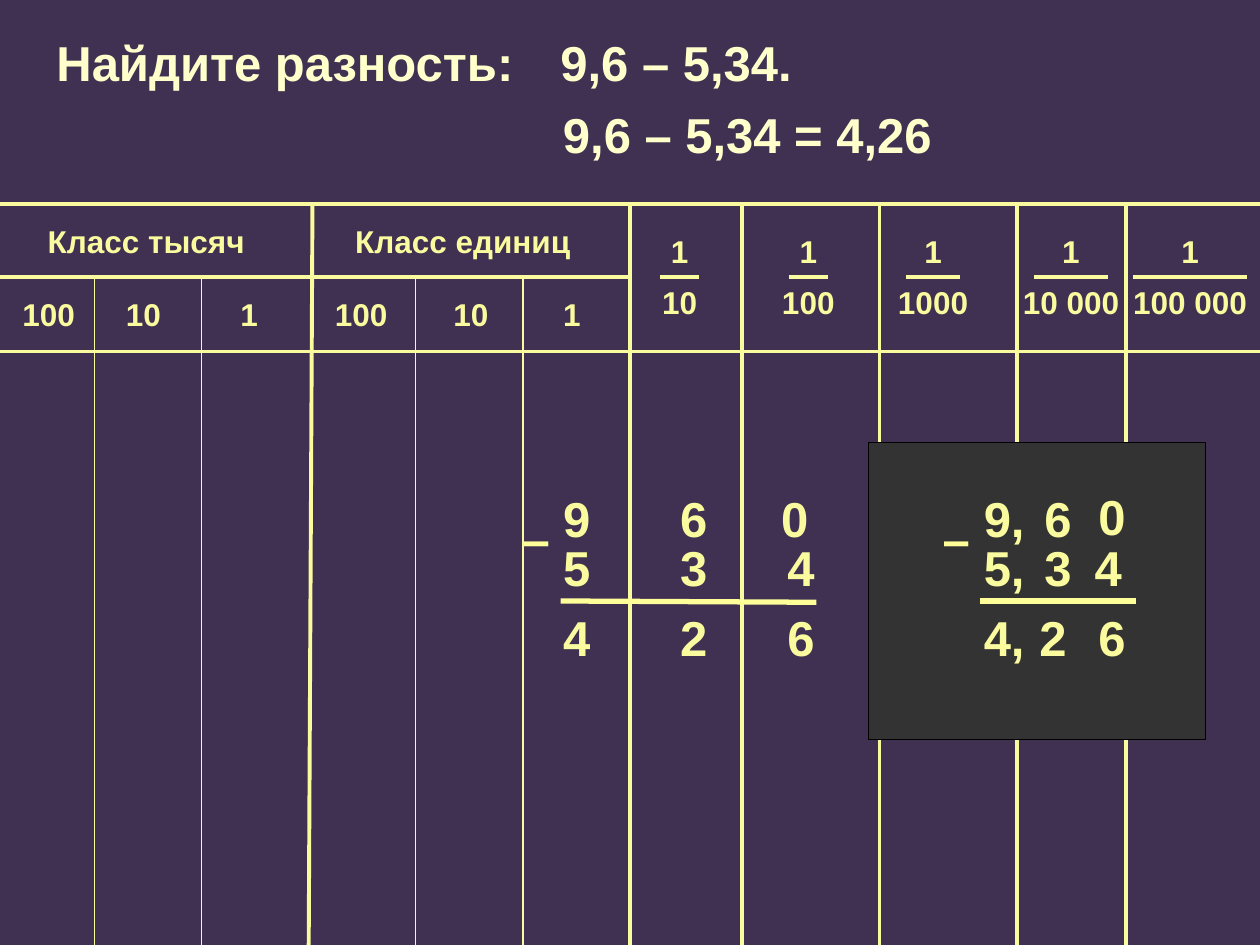
from pptx import Presentation
from pptx.util import Inches, Pt
from pptx.dml.color import RGBColor
from pptx.enum.shapes import MSO_CONNECTOR, MSO_SHAPE
from pptx.enum.text import PP_ALIGN
from lxml.etree import SubElement
from pptx.oxml.ns import qn

GOLD, LEMON, CREAM = "FAFA9E", "FFFF99", "FFFFCC"


def color(code):
    return RGBColor.from_string(code)


class Board:
    font = "Arial"

    def __init__(self, slide, back):
        self.slide = slide
        self.shapes = slide.shapes
        fill = slide.background.fill
        fill.solid()
        fill.fore_color.rgb = color(back)

    def line(self, x1, y1, x2, y2, width=2.25, ink=GOLD):
        line = self.shapes.add_connector(
            MSO_CONNECTOR.STRAIGHT, Inches(x1), Inches(y1), Inches(x2), Inches(y2))
        line.line.color.rgb = color(ink)
        line.line.width = Pt(width)
        SubElement(line._element.spPr, qn("a:effectLst"))

    def text(self, words, x, y, width, size=18, ink=GOLD, center=False, wrap=True):
        height = 0.4 if size == 18 else 0.57
        box = self.shapes.add_textbox(Inches(x), Inches(y), Inches(width), Inches(height))
        frame = box.text_frame
        frame.word_wrap = wrap
        frame.text = words
        para = frame.paragraphs[0]
        para.alignment = PP_ALIGN.CENTER if center else PP_ALIGN.LEFT
        for run in para.runs:
            run.font.name = self.font
            run.font.size = Pt(size)
            run.font.bold = True
            run.font.color.rgb = color(ink)

    def panel(self, x, y, width, height, fill, edge):
        box = self.shapes.add_shape(
            MSO_SHAPE.RECTANGLE, Inches(x), Inches(y), Inches(width), Inches(height))
        box.shadow.inherit = False
        box.fill.solid()
        box.fill.fore_color.rgb = color(fill)
        box.line.color.rgb = color(edge)
        box.line.width = Pt(0.75)


def main():
    deck = Presentation()
    deck.slide_width, deck.slide_height = Inches(10), Inches(7.5)
    board = Board(deck.slides.add_slide(deck.slide_layouts[6]), "403152")
    top, mid, low, end = 1.62, 2.2, 2.79, 7.5

    # Grid of the place value chart
    for x in (0.75, 1.6, 3.3, 4.15):
        board.line(x, mid, x, end, 0.75)
    board.line(2.48, top, 2.45, end)
    for x in (5, 5.89, 6.98, 8.07, 8.94):
        board.line(x, top, x, end)
    for y, right in ((top, 10), (mid, 5), (low, 10)):
        board.line(0, y, right, y)

    # Headings of whole places
    board.text("Класс тысяч", 0.28, 1.71, 2.12)
    board.text("Класс единиц", 2.72, 1.71, 2.12)
    for place, x, width in (("100", 0.08, 0.67), ("10", 0.9, 0.51), ("1", 1.81, 0.51),
                            ("100", 2.56, 0.75), ("10", 3.5, 0.75), ("1", 4.37, 0.71)):
        board.text(place, x, 2.29, width)

    # Headings of decimal places: text left and width, bar length
    for place, x, width, bar in (("10", 5.08, 0.63, 0.31), ("100", 6.1, 0.63, 0.31),
                                 ("1000", 6.97, 0.87, 0.43), ("10 000", 7.91, 1.18, 0.59),
                                 ("100 000", 8.54, 1.81, 0.9)):
        board.text("1", x, 1.79, width, center=True)
        board.text(place, x, mid, width, center=True)
        start = x + (width - bar) / 2
        board.line(start, mid, start + bar, mid)

    # Subtraction within the chart
    rows = (3.83, 4.22, 4.77)
    for y, digits in zip(rows, ("960", "534", "426")):
        for digit, x in zip(digits, (4.37, 5.3, 6.1 if y == rows[0] else 6.15)):
            board.text(digit, x, y, 0.42, 28)
    board.line(4.45, 4.77, 6.48, 4.78, 3, LEMON)
    board.text("–", 3.9, 3.99, 0.71, 28, LEMON, center=True)

    # Column subtraction on the dark panel
    board.panel(6.89, 3.51, 2.68, 2.36, "333333", "000000")
    for y, whole in zip(rows, ("9,", "5,", "4,")):
        board.text(whole, 7.71, y, 0.6, 28)
    for digit, x, y in (("6", 8.19, 3.83), ("0", 8.62, 3.81), ("3", 8.19, 4.22),
                        ("4", 8.59, 4.22), ("2", 8.15, 4.77), ("6", 8.62, 4.77)):
        board.text(digit, x, y, 0.37, 28)
    board.line(7.78, 4.77, 9.02, 4.77, 3, LEMON)
    board.text("–", 7.28, 3.99, 0.62, 28, LEMON, center=True)

    # Task and answer
    board.text("Найдите разность: \t9,6 – 5,34.", 0.35, 0.21, 6.46, 28, CREAM)
    board.text("9,6 – 5,34 = 4,26", 4.37, 0.78, 3.14, 28, CREAM, wrap=False)

    deck.save("out.pptx")


if __name__ == "__main__":
    main()
